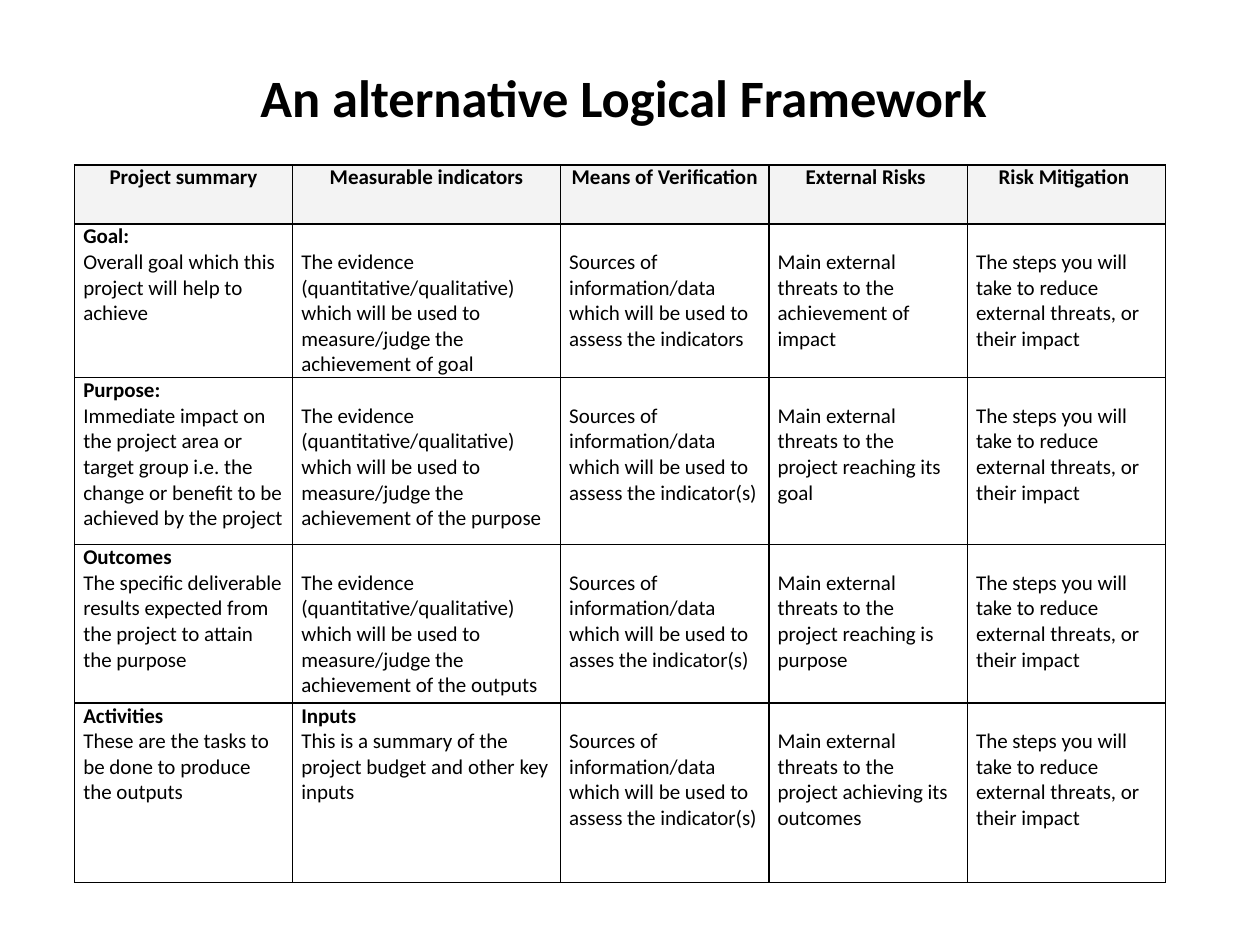
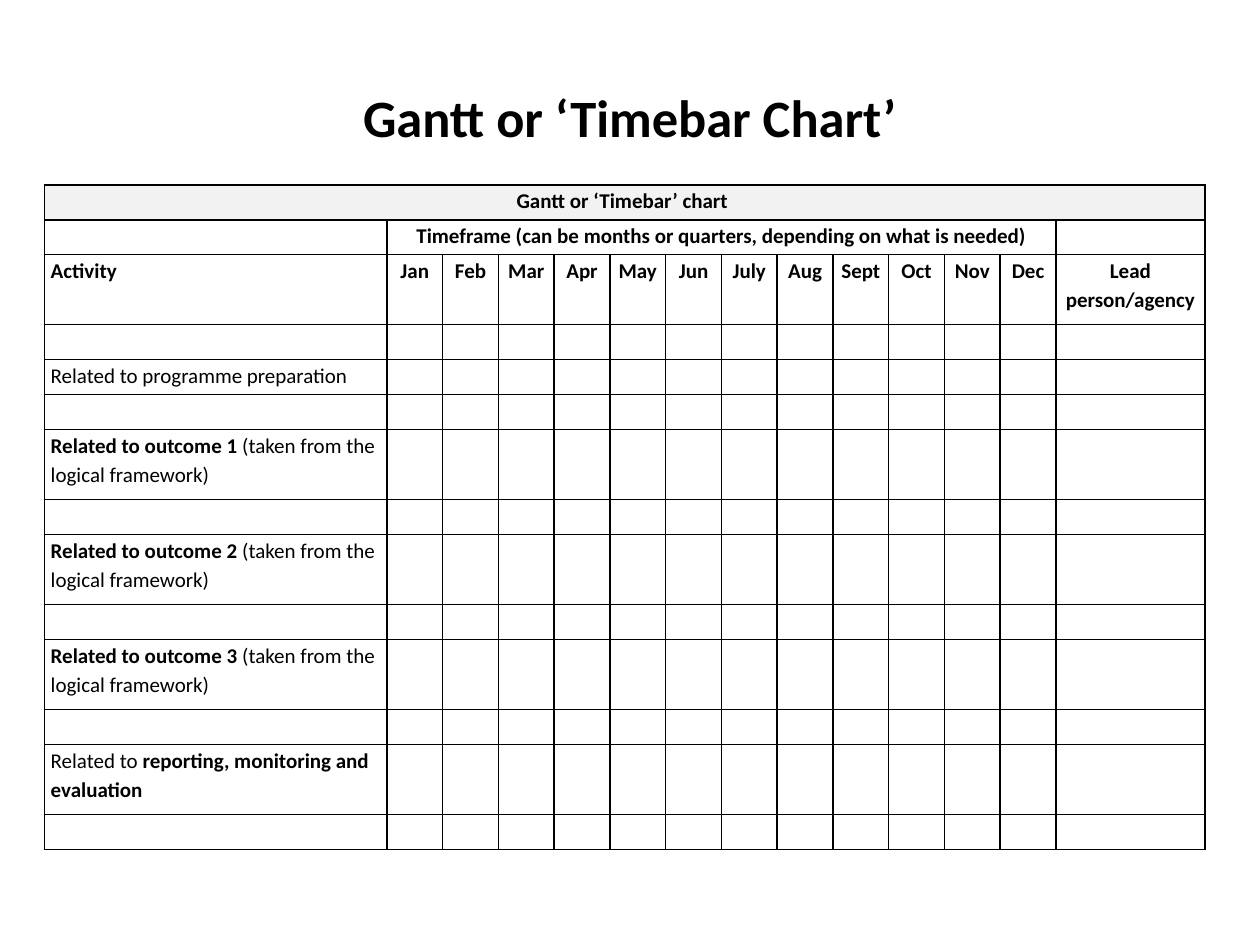
"""Build two project planning slides: a logical framework and a Gantt table."""
from dataclasses import dataclass
from typing import NamedTuple

from lxml.etree import SubElement
from pptx import Presentation
from pptx.dml.color import RGBColor
from pptx.enum.text import MSO_ANCHOR as Anchor, PP_ALIGN as Align
from pptx.oxml.ns import qn
from pptx.util import Pt


@dataclass(frozen=True)
class Theme:
    font: str = "Calibri"
    ink: str = "000000"
    framework_head: str = "F3F3F3"
    gantt_head: str = "F2F2F2"
    title_size: float = 30
    cell_size: float = 12
    cell_line: float = 14.65
    border: float = 1


class Span(NamedTuple):
    text: str
    bold: bool = False


class Entry(NamedTuple):
    lines: tuple[tuple[Span, ...], ...] = ((),)
    align: Align = Align.LEFT
    fill: str | None = None
    skip_line: bool = False
    columns: int = 1


class Grid(NamedTuple):
    left: float
    top: float
    widths: list[float]
    heights: list[float]
    inset: float
    line_spacing: float


class TitleBox(NamedTuple):
    text: str
    height: float


THEME = Theme()
FRAMEWORK_TITLE = TitleBox("An alternative Logical Framework ", 67)
FRAMEWORK = Grid(42.6, 94.3, [124.6, 153.1, 119.1, 113.4, 113.2],
                 [33.7, 87.9, 95.4, 90.6, 102.6], 5, 1)
FRAMEWORK_HEADS = ["Project summary", "Measurable indicators", "Means of Verification",
                   "External Risks ", "Risk Mitigation "]
EVIDENCE = ("The evidence (quantitative/qualitative) which will be used to "
            "measure/judge the achievement of ")
SOURCES = "Sources of information/data which will be used to "
THREATS = "Main external threats to the "
MITIGATION = "The steps you will take to reduce external threats, or their impact"

GANTT_TITLE = TitleBox("Gantt or ‘Timebar Chart’", 90)
MONTHS = "Jan Feb Mar Apr May Jun July Aug Sept Oct Nov Dec".split()
ROW_UNIT = 20
TALL_ROWS = {2, 6, 8, 10, 12}
GANTT = Grid(25.4, 105.6, [195.7] + [31.87] * len(MONTHS) + [85.1],
             [ROW_UNIT * (2 if row in TALL_ROWS else 1) for row in range(14)], 3.6, 1.15)


def head(text: str, fill: str | None = None, columns: int = 1) -> Entry:
    """Return a centred bold entry."""
    return Entry(((Span(text, True),),), Align.CENTER, fill, columns=columns)


def labelled(label: str, text: str) -> Entry:
    """Return a bold label with a plain paragraph below it."""
    return Entry(((Span(label, True),), (Span(text),)))


def lowered(text: str) -> Entry:
    """Return plain text that starts one line down."""
    return Entry(((Span(text),),), skip_line=True)


def phrase(*spans: Span) -> Entry:
    """Return a single left-aligned paragraph."""
    return Entry((spans,))


def framework_row(summary: Entry, indicator: Entry, source: str, threat: str) -> list[Entry]:
    """Return one level of the logical framework."""
    return [summary, indicator, lowered(SOURCES + source), lowered(THREATS + threat),
            lowered(MITIGATION)]


def framework_rows() -> list[list[Entry]]:
    """Return every row of the logical framework."""
    return [
        [head(text, THEME.framework_head) for text in FRAMEWORK_HEADS],
        framework_row(
            labelled("Goal:", "Overall goal which this project will help to achieve"),
            lowered(EVIDENCE + "goal"), "assess the indicators", "achievement of impact"),
        framework_row(
            labelled("Purpose:", "Immediate impact on the project area or target group i.e. "
                     "the change or benefit to be achieved by the project"),
            lowered(EVIDENCE + "the purpose"), "assess the indicator(s)",
            "project reaching its goal"),
        framework_row(
            labelled("Outcomes", "The specific deliverable results expected from the project "
                     "to attain the purpose"),
            lowered(EVIDENCE + "the outputs"), "asses the indicator(s)",
            "project reaching is purpose"),
        framework_row(
            labelled("Activities", "These are the tasks to be done to produce the outputs"),
            labelled("Inputs", "This is a summary of the project budget and other key inputs"),
            "assess the indicator(s)", "project achieving its outcomes"),
    ]


def gantt_rows() -> list[list[Entry]]:
    """Return the Gantt heads, then each activity between empty rows."""
    empty = Entry()
    activities = [phrase(Span("Related to programme preparation"))]
    activities += [phrase(Span(f"Related to outcome {number}", True),
                          Span(" (taken from the logical framework)"))
                   for number in range(1, 4)]
    activities.append(phrase(Span("Related to "),
                             Span("reporting, monitoring and evaluation", True)))
    blank_row = [empty] * len(GANTT.widths)
    rows = [
        [head("Gantt or ‘Timebar’ chart ", THEME.gantt_head, len(GANTT.widths))],
        [empty, head("Timeframe (can be months or quarters, depending on what is needed)",
                     columns=len(MONTHS)), empty],
        [phrase(Span("Activity", True)), *map(head, MONTHS), head("Lead person/agency")],
        blank_row,
    ]
    for activity in activities:
        rows += [[activity, *blank_row[1:]], blank_row]
    return rows


def style_paragraph(para, size: float, align: Align, bold: bool | None) -> None:
    """Apply the shared font and alignment to a paragraph."""
    para.alignment = align
    para.font.name = THEME.font
    para.font.size = Pt(size)
    para.font.color.rgb = RGBColor.from_string(THEME.ink)
    para.font.bold = bold


def add_title(page, title: TitleBox) -> None:
    """Draw the centred slide title."""
    box = page.shapes.add_textbox(Pt(36), Pt(21.6), Pt(648), Pt(title.height))
    frame = box.text_frame
    frame.word_wrap = True
    frame.vertical_anchor = Anchor.MIDDLE
    para = frame.paragraphs[0]
    para.add_run().text = title.text
    style_paragraph(para, THEME.title_size, Align.CENTER, True)


def add_borders(cell) -> None:
    """Rule all four sides of a cell."""
    properties = cell._tc.get_or_add_tcPr()
    for index, side in enumerate(("a:lnL", "a:lnR", "a:lnT", "a:lnB")):
        line = SubElement(properties, qn(side), w=str(Pt(THEME.border)))
        fill = SubElement(line, qn("a:solidFill"))
        SubElement(fill, qn("a:srgbClr"), val=THEME.ink)
        properties.insert(index, line)


def fill_cell(cell, entry: Entry, grid: Grid) -> None:
    """Write an entry into a table cell."""
    cell.margin_left = cell.margin_right = Pt(grid.inset)
    cell.margin_top = Pt(THEME.cell_line if entry.skip_line else 0)
    cell.margin_bottom = Pt(0)
    if entry.fill:
        cell.fill.solid()
        cell.fill.fore_color.rgb = RGBColor.from_string(entry.fill)
    else:
        cell.fill.background()
    frame = cell.text_frame
    for index, spans in enumerate(entry.lines):
        para = frame.add_paragraph() if index else frame.paragraphs[0]
        weights = {span.bold for span in spans}
        style_paragraph(para, THEME.cell_size, entry.align,
                        weights.pop() if len(weights) == 1 else None)
        para.line_spacing = grid.line_spacing
        for span in spans:
            run = para.add_run()
            run.text = span.text
            if weights:
                run.font.bold = span.bold


def add_grid(page, grid: Grid, rows: list[list[Entry]]) -> None:
    """Draw a ruled table from its entries."""
    table = page.shapes.add_table(
        len(grid.heights), len(grid.widths), Pt(grid.left), Pt(grid.top),
        Pt(sum(grid.widths)), Pt(sum(grid.heights))).table
    table.first_row = table.horz_banding = False
    for column, width in zip(table.columns, grid.widths):
        column.width = Pt(width)
    for row, height in zip(table.rows, grid.heights):
        row.height = Pt(height)
    for row_index, entries in enumerate(rows):
        column_index = 0
        for entry in entries:
            last = column_index + entry.columns - 1
            cell = table.cell(row_index, column_index)
            if entry.columns > 1:
                cell.merge(table.cell(row_index, last))
            for covered in range(column_index, last + 1):
                part = table.cell(row_index, covered)
                fill_cell(part, entry if covered == column_index else Entry(fill=entry.fill), grid)
                add_borders(part)
            column_index = last + 1


def main() -> None:
    """Build and save the deck."""
    deck = Presentation()
    deck.slide_width, deck.slide_height = Pt(720), Pt(540)
    for title, grid, rows in ((FRAMEWORK_TITLE, FRAMEWORK, framework_rows()),
                              (GANTT_TITLE, GANTT, gantt_rows())):
        page = deck.slides.add_slide(deck.slide_layouts[6])
        add_title(page, title)
        add_grid(page, grid, rows)
    deck.save("out.pptx")


if __name__ == "__main__":
    main()
